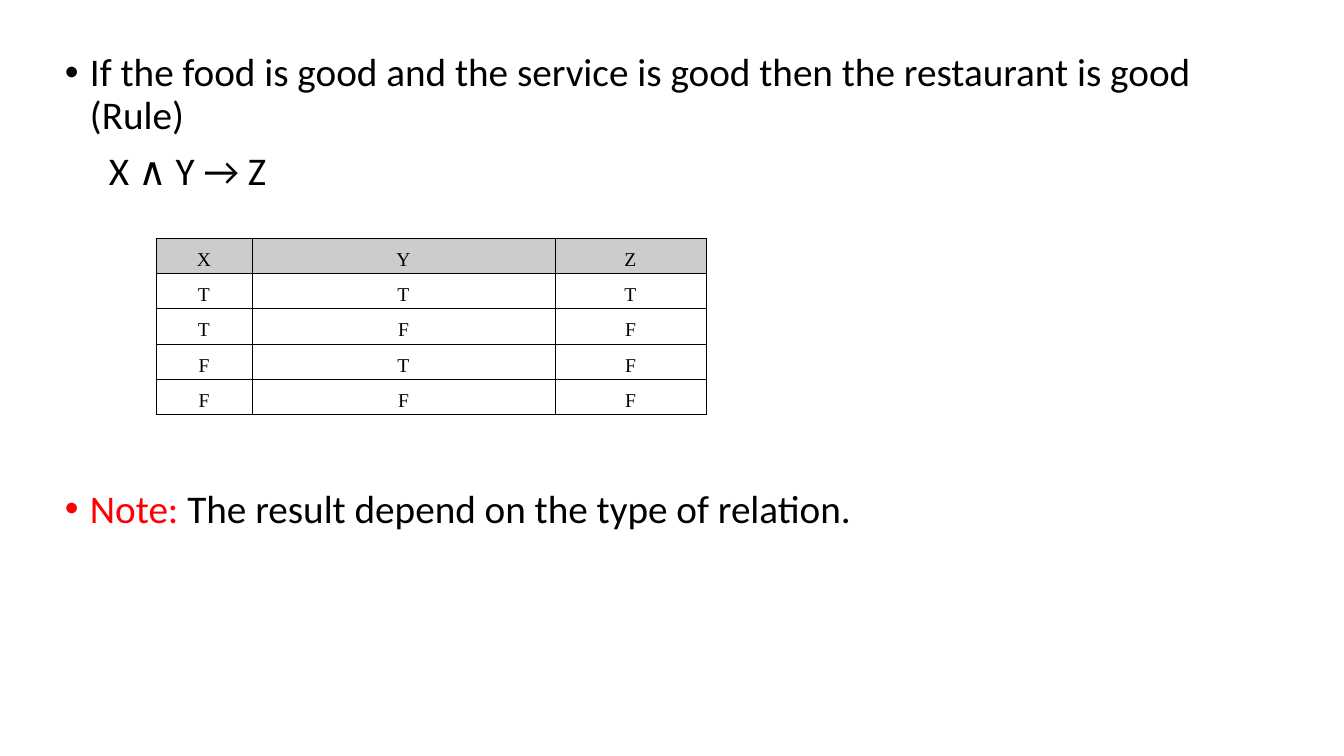
from lxml import etree
from pptx import Presentation
from pptx import util as u
from pptx.dml.color import RGBColor
from pptx.enum import text
from pptx.oxml.ns import qn

PX = 12192000 / 1344
COLORS = {"text": "000000", "note": "FF0000", "header": "CCCCCC", "border": "000008"}


def px(n):
    """Turn slide pixels into EMU."""
    return u.Emu(round(n * PX))


def add_run(p, words, font, size, color):
    r = p.add_run()
    r.text = words
    for name, value in {"name": font, "size": u.Pt(size)}.items():
        setattr(r.font, name, value)
    r.font.color.rgb = RGBColor.from_string(COLORS[color])


prs = Presentation()
prs.slide_width, prs.slide_height = px(1344), px(756)
s = prs.slides.add_slide(prs.slide_layouts[6])

# Rule, formula and note: runs, bullet colour, left margin in px, space before in pt
paragraphs = [
    ([("If the food is good and the service is good then the restaurant is good (Rule)", "text")],
     "text", 25, 0),
    ([("X ∧ Y → Z", "text")], None, 44, 10),
    ([("Note: ", "note"), ("The result depend on the type of relation.", "text")],
     "note", 25, 211),
]
tf = s.shapes.add_textbox(px(55), px(48), px(1197), px(649)).text_frame
tf.word_wrap = True
for i, (runs, bullet, margin, before) in enumerate(paragraphs):
    p = tf.add_paragraph() if i else tf.paragraphs[0]
    p.line_spacing = 0.9
    p.space_before = u.Pt(before)
    pPr = p._p.get_or_add_pPr()
    pPr.set("marL", str(px(margin)))
    if bullet:
        pPr.set("indent", str(px(-margin)))
        clr = etree.SubElement(pPr, qn("a:buClr"))
        etree.SubElement(clr, qn("a:srgbClr"), val=COLORS[bullet])
        etree.SubElement(pPr, qn("a:buFont"), typeface="Arial")
        etree.SubElement(pPr, qn("a:buChar"), char="•")
    for words, color in runs:
        add_run(p, words, "Calibri", 28, color)

# Truth table
truth = ["XYZ", "TTT", "TFF", "FTF", "FFF"]
widths = [96, 303, 151]
row_height = 32
table = s.shapes.add_table(len(truth), len(widths), px(156), px(238),
                           px(sum(widths)), px(row_height * len(truth))).table
for column, width in zip(table.columns, widths):
    column.width = px(width)
cell_format = {"margin_left": px(7), "margin_right": px(7), "margin_top": 0,
               "margin_bottom": 0, "vertical_anchor": text.MSO_ANCHOR.TOP}
for i, values in enumerate(truth):
    table.rows[i].height = px(row_height)
    for j, value in enumerate(values):
        cell = table.cell(i, j)
        for name, setting in cell_format.items():
            setattr(cell, name, setting)
        tcPr = cell._tc.get_or_add_tcPr()
        for side in ("a:lnL", "a:lnR", "a:lnT", "a:lnB"):
            ln = etree.SubElement(tcPr, qn(side), w=str(u.Pt(0.5)))
            fill = etree.SubElement(ln, qn("a:solidFill"))
            etree.SubElement(fill, qn("a:srgbClr"), val=COLORS["border"])
        if i == 0:
            cell.fill.solid()
            cell.fill.fore_color.rgb = RGBColor.from_string(COLORS["header"])
        else:
            cell.fill.background()
        p = cell.text_frame.paragraphs[0]
        p.alignment = text.PP_ALIGN.CENTER
        p.line_spacing = 1.5
        add_run(p, value, "Times New Roman", 14, "text")

prs.save("out.pptx")
